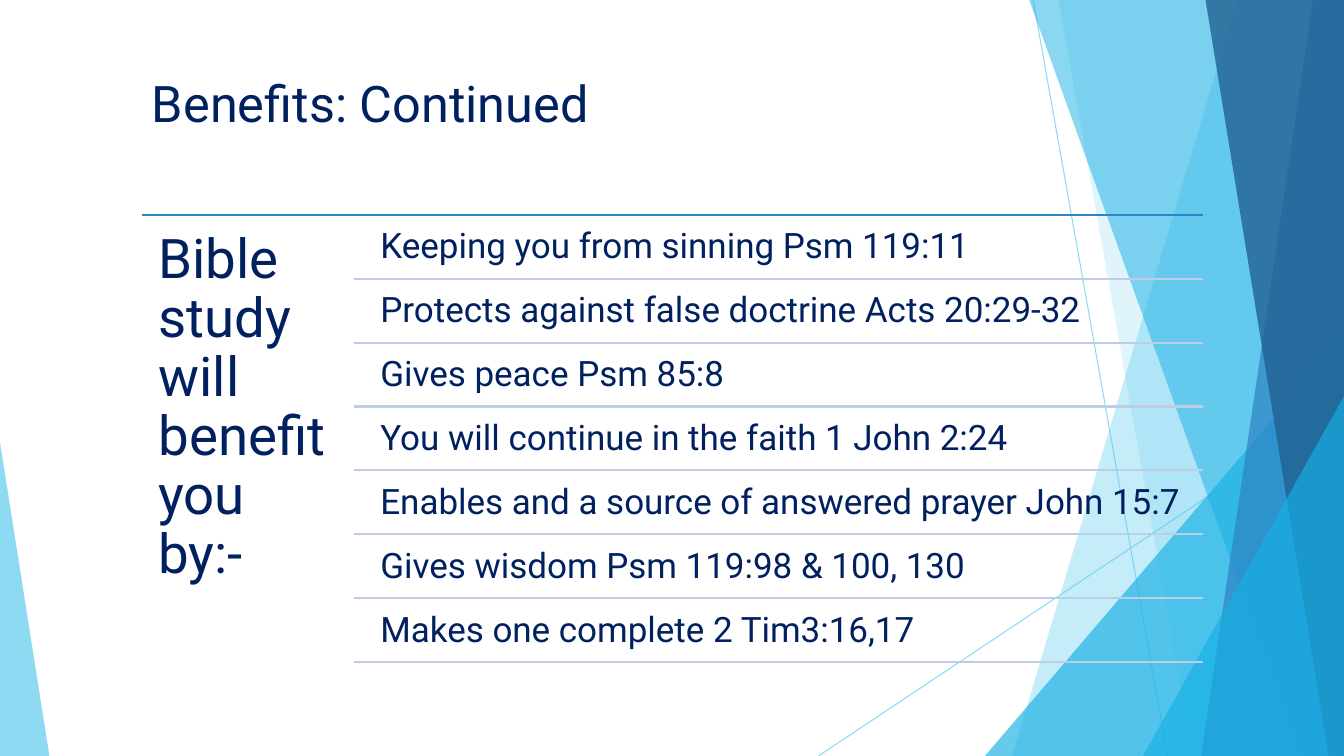
from dataclasses import dataclass

from lxml import etree
from pptx import Presentation
from pptx.dml.color import RGBColor
from pptx.enum.shapes import MSO_CONNECTOR, MSO_SHAPE
from pptx.enum.text import MSO_ANCHOR, PP_ALIGN
from pptx.oxml.ns import qn
from pptx.util import Pt

STRAIGHT = MSO_CONNECTOR.STRAIGHT
TRIANGLE = MSO_SHAPE.ISOSCELES_TRIANGLE
TOP = MSO_ANCHOR.TOP
LEFT = PP_ALIGN.LEFT

WIDTH, HEIGHT = 960, 540
FONT = "Roboto"
NAVY = "002060"
SKY = "5FCBEF"
CYAN = "17B0E4"
BLUE = "2E83C3"
DEEP_BLUE = "226292"
PALE_BLUE = "BECDE4"


@dataclass
class Band:
    """A four-sided band from its slanted left edge to the slide's right edge."""
    top_left: float
    bottom_left: float
    color: str
    opacity: int


@dataclass
class Corner:
    """A right triangle standing on the slide's bottom edge."""
    left: float
    top: float
    width: float
    apex: float
    color: str
    opacity: int


FACETS = [
    Band(884, 723, SKY, 36),
    Band(756, 852, SKY, 20),
    Corner(703.5, 240, 256.5, 1, CYAN, 66),
    Band(735, 929.5, CYAN, 50),
    Band(938, 858, BLUE, 70),
    Band(861, 949, DEEP_BLUE, 80),
    Corner(816.5, 283, 143.5, 1, CYAN, 66),
    Corner(0, 316, 35.3, 0, SKY, 70),
]

BENEFITS = [
    "Keeping you from sinning Psm 119:11",
    "Protects against false doctrine Acts 20:29-32",
    "Gives peace Psm 85:8",
    "You will continue in the faith 1 John 2:24",
    "Enables and a source of answered prayer John 15:7",
    "Gives wisdom Psm 119:98 & 100, 130",
    "Makes one complete 2 Tim3:16,17",
]

LIST_LEFT, LIST_TOP, LIST_RIGHT = 101.5, 153.4, 859
ROW_LEFT, ROW_PITCH = 252.8, 45.66


def rgb(color: str) -> RGBColor:
    return RGBColor.from_string(color)


def set_opacity(shape, percent: int) -> None:
    for color in shape.element.iter(qn("a:srgbClr")):
        etree.SubElement(color, qn("a:alpha")).set("val", str(percent * 1000))


def add_line(page, start: tuple, end: tuple, color: str, weight: float = 1.5,
             opacity: int = 100) -> None:
    line = page.shapes.add_connector(STRAIGHT, *map(Pt, start + end))
    line.line.color.rgb = rgb(color)
    line.line.width = Pt(weight)
    if opacity < 100:
        set_opacity(line, opacity)
    etree.SubElement(line.element.spPr, qn("a:effectLst"))


def add_facet(page, facet: Band | Corner) -> None:
    if isinstance(facet, Band):
        builder = page.shapes.build_freeform(Pt(facet.top_left), Pt(-0.6))
        corners = [(WIDTH, -0.6), (WIDTH, HEIGHT), (facet.bottom_left, HEIGHT)]
        builder.add_line_segments([(Pt(x), Pt(y)) for x, y in corners], close=True)
        shape = builder.convert_to_shape()
    else:
        shape = page.shapes.add_shape(TRIANGLE, Pt(facet.left), Pt(facet.top),
                                      Pt(facet.width), Pt(HEIGHT - facet.top))
        shape.adjustments[0] = facet.apex
    shape.fill.solid()
    shape.fill.fore_color.rgb = rgb(facet.color)
    shape.line.fill.background()
    shape.shadow.inherit = False
    set_opacity(shape, facet.opacity)


def add_text(page, text: str, *, left: float, top: float, width: float, height: float,
             size: float, inset_x: float, inset_y: float, spacing: float = 0.9) -> None:
    box = page.shapes.add_textbox(Pt(left), Pt(top), Pt(width), Pt(height))
    frame = box.text_frame
    frame.word_wrap = True
    frame.vertical_anchor = TOP
    frame.margin_left = frame.margin_right = Pt(inset_x)
    frame.margin_top = frame.margin_bottom = Pt(inset_y)
    para = frame.paragraphs[0]
    para.alignment = LEFT
    para.line_spacing = spacing
    span = para.add_run()
    span.text = text
    span.font.name = FONT
    span.font.size = Pt(size)
    span.font.color.rgb = rgb(NAVY)


def add_backdrop(page) -> None:
    add_line(page, (738, 0), (834, HEIGHT), SKY, 0.75, 70)
    add_line(page, (WIDTH, 290), (584.6, HEIGHT), SKY, 0.75, 70)
    for facet in FACETS:
        add_facet(page, facet)


def add_benefits(page) -> None:
    add_line(page, (LIST_LEFT, LIST_TOP), (LIST_RIGHT, LIST_TOP), BLUE)
    add_text(page, "Bible study will benefit you by:-", left=LIST_LEFT, top=LIST_TOP,
             width=151.3, height=322.6, size=39, inset_x=11.7, inset_y=11.7)
    for row, benefit in enumerate(BENEFITS):
        top = LIST_TOP + row * ROW_PITCH
        bottom = top + ROW_PITCH
        add_text(page, benefit, left=264.2, top=top + 2.3, width=594.8, height=43.4,
                 size=25, inset_x=7.5, inset_y=7.5)
        add_line(page, (ROW_LEFT, bottom), (LIST_RIGHT, bottom), PALE_BLUE)


def main() -> None:
    deck = Presentation()
    deck.slide_width, deck.slide_height = Pt(WIDTH), Pt(HEIGHT)
    page = deck.slides.add_slide(deck.slide_layouts[6])
    add_backdrop(page)
    add_text(page, "Benefits: Continued", left=101.5, top=48, width=803, height=86.4,
             size=36, inset_x=7.2, inset_y=3.6, spacing=1.0)
    add_benefits(page)
    deck.save("out.pptx")


if __name__ == "__main__":
    main()
